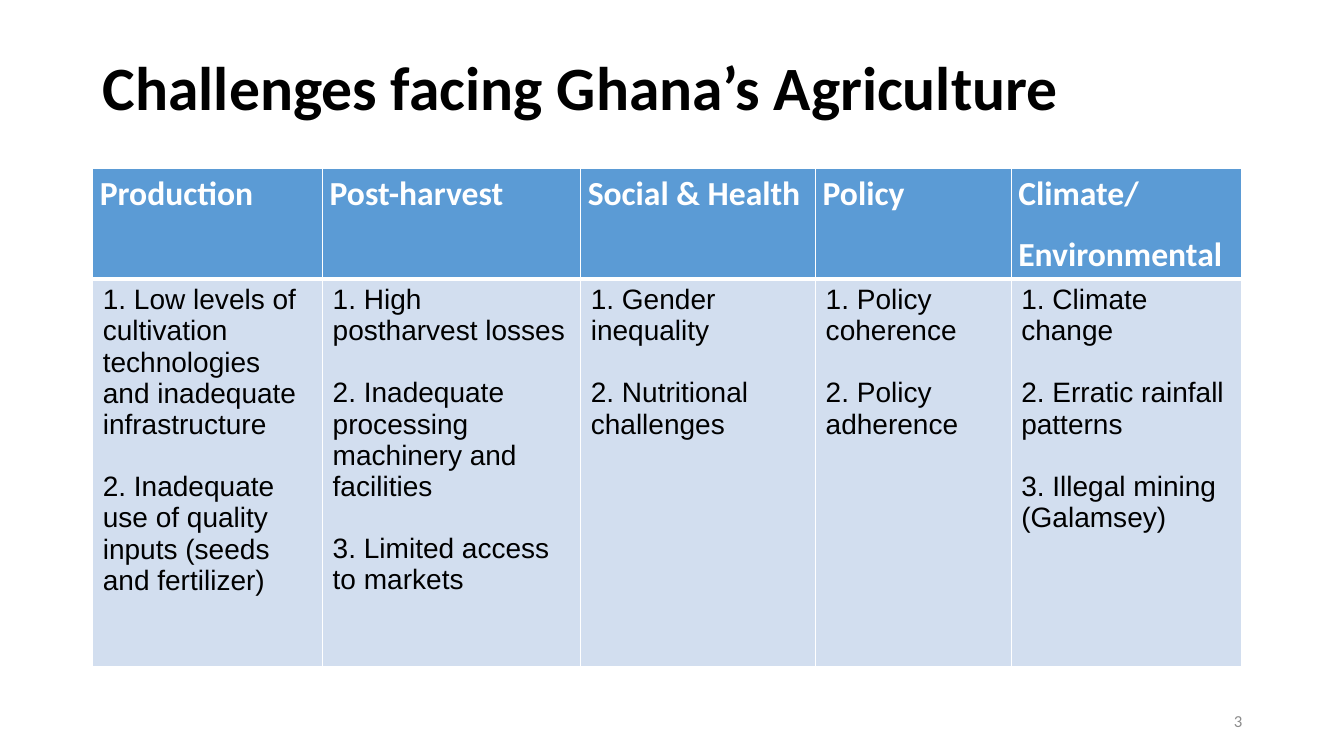
import pptx
import pptx.util
import pptx.dml.color
import pptx.enum.text
import pptx.oxml
import pptx.oxml.ns

PX = 9144  # EMU per px, 100 px to the inch
COLORS = {"white": "FFFFFF", "black": "000000", "header": "5B9BD5",
          "body": "D2DEEF", "number": "8C8C8C"}
ALIGN = pptx.enum.text.PP_ALIGN
ANCHOR = pptx.enum.text.MSO_ANCHOR

COLUMNS = [
    (228, ["Production"],
     ["1. Low levels of cultivation technologies and inadequate infrastructure",
      "2. Inadequate use of quality inputs (seeds and fertilizer)"]),
    (256, ["Post-harvest"],
     ["1. High postharvest losses",
      "2. Inadequate processing machinery and facilities",
      "3. Limited access to markets"]),
    (233, ["Social & Health"],
     ["1. Gender inequality", "2. Nutritional challenges"]),
    (194, ["Policy"],
     ["1. Policy coherence", "2. Policy adherence"]),
    (228, ["Climate/", "Environmental"],
     ["1. Climate change", "2. Erratic rainfall patterns",
      "3. Illegal mining (Galamsey)"]),
]
ROW_HEIGHTS = (110, 384)


def emu(*lengths):
    return [pptx.util.Emu(n * PX) for n in lengths]


def rgb(name):
    return pptx.dml.color.RGBColor.from_string(COLORS[name])


def write(tf, lines, font, size, color, bold=False, align=ALIGN.LEFT,
          spacing=1.0, after=0, last_after=0):
    tf.text = "\n".join(lines)
    tf.word_wrap = True
    for p in tf.paragraphs:
        p.alignment = align
        p.line_spacing = spacing
        p.space_before = pptx.util.Pt(0)
        p.space_after = pptx.util.Pt(after)
        for r in p.runs:
            r.font.name = font
            r.font.size = pptx.util.Pt(size)
            r.font.bold = bold
            r.font.color.rgb = rgb(color)
    p.space_after = pptx.util.Pt(last_after)


def set_cell(cell, fill, bottom_width):
    tcPr = cell._tc.get_or_add_tcPr()
    for side, width in (("L", 1), ("R", 1), ("T", 1), ("B", bottom_width)):
        tcPr.append(pptx.oxml.parse_xml(
            f'<a:ln{side} {pptx.oxml.ns.nsdecls("a")} w="{pptx.util.Pt(width)}">'
            f'<a:solidFill><a:srgbClr val="{COLORS["white"]}"/></a:solidFill>'
            f'</a:ln{side}>'))
    cell.fill.solid()
    cell.fill.fore_color.rgb = rgb(fill)


def add_title(slide, x, y, w, h):
    sp = slide.shapes.title
    sp.left, sp.top, sp.width, sp.height = emu(x, y, w, h)
    tf = sp.text_frame
    tf.vertical_anchor = ANCHOR.MIDDLE
    write(tf, ["Challenges facing Ghana’s Agriculture"], "Calibri", 44,
          "black", bold=True, spacing=0.9)


def add_challenges(slide, x, y):
    w = sum(width for width, _, _ in COLUMNS)
    frame = slide.shapes.add_table(len(ROW_HEIGHTS), len(COLUMNS),
                                   *emu(x, y, w, sum(ROW_HEIGHTS)))
    table = frame.table
    table.horz_banding = False
    for row, height in zip(table.rows, ROW_HEIGHTS):
        row.height, = emu(height)
    for i, (width, heading, items) in enumerate(COLUMNS):
        table.columns[i].width, = emu(width)
        # Heading
        head = table.cell(0, i)
        head.margin_left, head.margin_right = emu(7, 7)
        head.margin_top = head.margin_bottom = 0
        set_cell(head, "header", 3)
        write(head.text_frame, heading, "Calibri", 24, "white", bold=True,
              align=ALIGN.JUSTIFY, spacing=1.14, after=10, last_after=10)
        # Numbered challenges, one line apart
        body = table.cell(1, i)
        set_cell(body, "body", 1)
        write(body.text_frame, items, "Arial", 20, "black", after=22)


def add_slide_number(slide, x, y, w, h):
    tf = slide.shapes.add_textbox(*emu(x, y, w, h)).text_frame
    tf.vertical_anchor = ANCHOR.MIDDLE
    write(tf, ["3"], "Calibri", 12, "number", align=ALIGN.RIGHT)


def main():
    prs = pptx.Presentation()
    prs.slide_width, prs.slide_height = emu(1333, 750)
    slide = prs.slides.add_slide(prs.slide_layouts[5])
    add_title(slide, 92, 40, 1150, 100)
    add_challenges(slide, 92, 167)
    add_slide_number(slide, 942, 695, 300, 40)
    prs.save("out.pptx")


if __name__ == "__main__":
    main()
